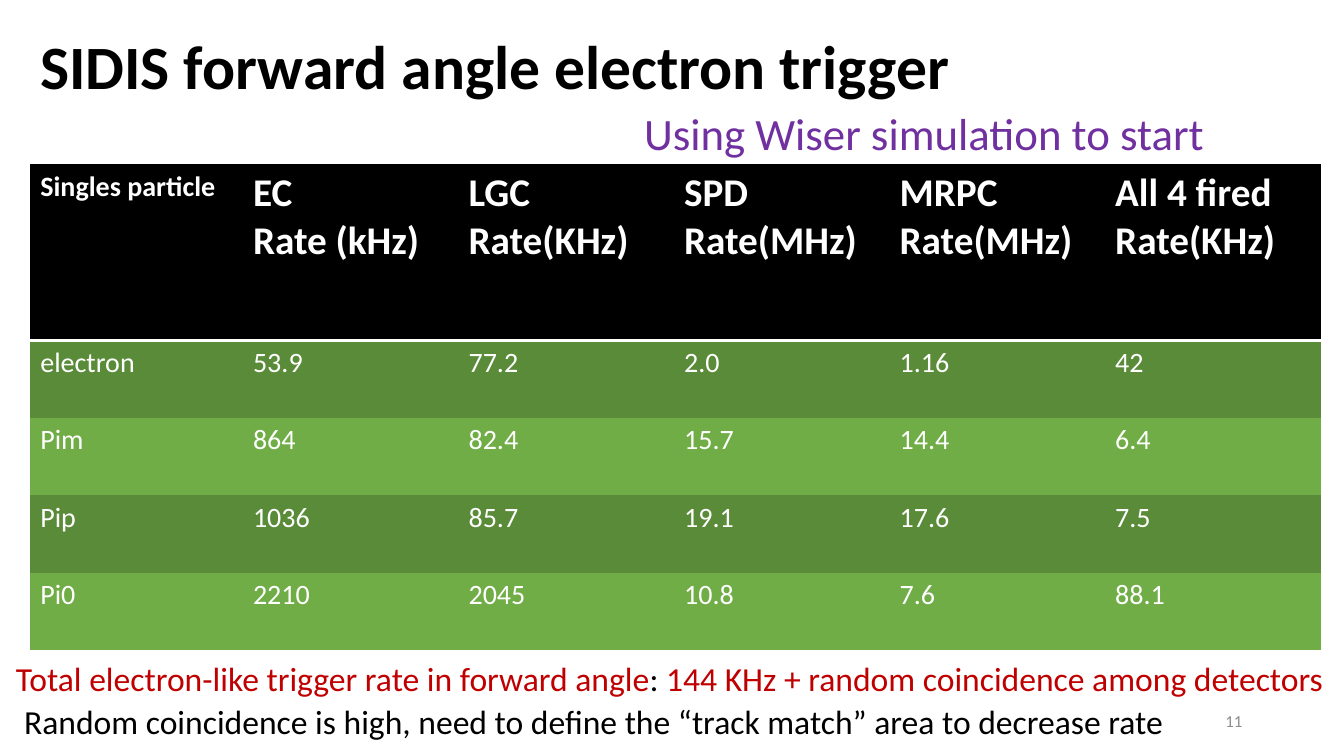
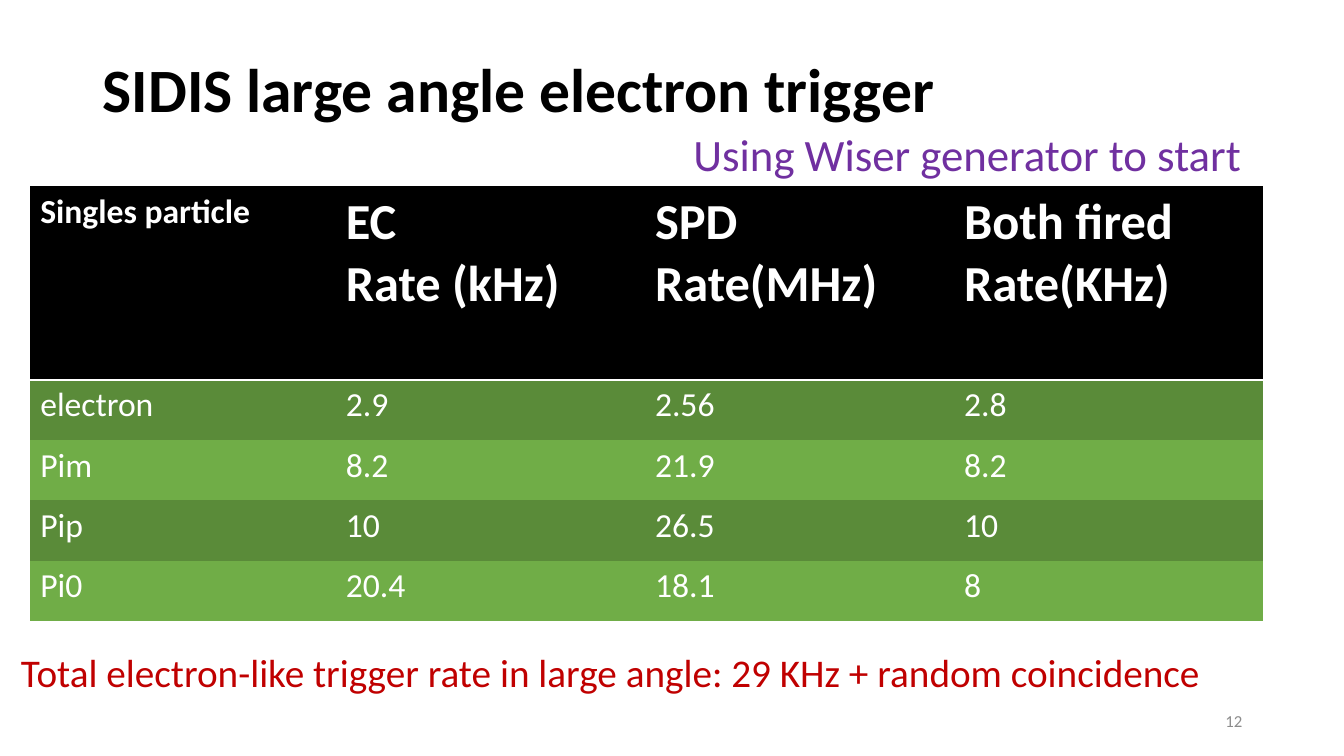
from lxml import etree
from pptx import Presentation
from pptx import util as u
from pptx.dml import color as dml
from pptx.enum import text as t
from pptx.oxml import ns

PX = 9144
FONT = "Calibri"
COLORS = {
    "ink": "000000",
    "paper": "FFFFFF",
    "dark_row": "5A8B39",
    "light_row": "70AD47",
    "note": "7030A0",
    "result": "C00000",
    "number": "8C8C8C",
}
PLAIN_TABLE = "{2D5ABB26-0587-4C30-8999-92F81FD0307C}"
TITLE_ONLY = 5


def rgb(name):
    return dml.RGBColor.from_string(COLORS[name])


def emu(box):
    return [u.Emu(length * PX) for length in box]


def write(frame, text, size=24, color="ink", bold=False,
          align=t.PP_ALIGN.LEFT, spacing=None):
    lines = [[(line, color)] for line in text.split("\n")] if isinstance(text, str) else [text]
    for index, line in enumerate(lines):
        para = frame.add_paragraph() if index else frame.paragraphs[0]
        para.alignment = align
        if spacing:
            para.line_spacing = spacing
        for words, shade in line:
            span = para.add_run()
            span.text = words
            span.font.name = FONT
            span.font.size = u.Pt(size)
            span.font.bold = bold
            span.font.color.rgb = rgb(shade)


def add_title(page, box, text):
    title = page.shapes.title
    title.left, title.top, title.width, title.height = emu(box)
    frame = title.text_frame
    frame.auto_size = t.MSO_AUTO_SIZE.NONE
    frame.vertical_anchor = t.MSO_ANCHOR.MIDDLE
    write(frame, text, size=44, bold=True, spacing=0.9)


def add_text(page, box, text, wrap=True, anchor=t.MSO_ANCHOR.TOP, **style):
    frame = page.shapes.add_textbox(*emu(box)).text_frame
    frame.word_wrap = wrap
    frame.vertical_anchor = anchor
    write(frame, text, **style)


def add_bottom_rule(cell, color, points):
    properties = cell._tc.get_or_add_tcPr()
    line = etree.Element(ns.qn("a:lnB"), w=str(u.Pt(points)))
    fill = etree.SubElement(line, ns.qn("a:solidFill"))
    etree.SubElement(fill, ns.qn("a:srgbClr"), val=COLORS[color])
    properties.insert(0, line)


def add_rates(page, box, first_column, header_height, rows, label_size, header_size):
    left, top, width, height = box
    row_count, column_count = len(rows), len(rows[0])
    holder = page.shapes.add_table(row_count, column_count, *emu(box))
    for style in holder.element.iter(ns.qn("a:tableStyleId")):
        style.text = PLAIN_TABLE
    table = holder.table
    table.first_row = True
    table.horz_banding = False

    other_column = (width - first_column) / (column_count - 1)
    body_height = (height - header_height) / (row_count - 1)
    for index, column in enumerate(table.columns):
        column.width = u.Emu(round((other_column if index else first_column) * PX))
    for index, row in enumerate(table.rows):
        row.height = u.Emu(round((body_height if index else header_height) * PX))

    for r, values in enumerate(rows):
        header = r == 0
        band = "ink" if header else ("dark_row" if r % 2 else "light_row")
        for c, value in enumerate(values):
            cell = table.cell(r, c)
            cell.fill.solid()
            cell.fill.fore_color.rgb = rgb(band)
            size = header_size if header and c else label_size
            write(cell.text_frame, value, size=size, color="paper", bold=header)
            if header:
                add_bottom_rule(cell, "paper", 2)


def add_trigger_page(deck, number, title, note, rates, results):
    page = deck.slides.add_slide(deck.slide_layouts[TITLE_ONLY])
    add_title(page, *title)
    add_rates(page, **rates)
    add_text(page, *note, size=32, color="note")
    add_text(page, (942, 695, 300, 40), str(number), size=12, color="number",
             align=t.PP_ALIGN.RIGHT, anchor=t.MSO_ANCHOR.MIDDLE)
    for box, text, style in results:
        add_text(page, box, text, wrap=False, **style)


def main():
    deck = Presentation()
    deck.slide_width, deck.slide_height = emu((1333, 750))

    add_trigger_page(
        deck, 11,
        title=((30, 12, 1150, 114), "SIDIS forward angle electron trigger"),
        note=((629, 100, 665, 64), "Using Wiser simulation to start"),
        rates=dict(
            box=(30, 163, 1280, 482), first_column=211, header_height=175,
            label_size=20, header_size=28,
            rows=[
                ["Singles particle", "EC\nRate (kHz)", "LGC\nRate(KHz)",
                 "SPD\nRate(MHz)", "MRPC\nRate(MHz)", "All 4 fired\nRate(KHz)"],
                ["electron", "53.9", "77.2", "2.0", "1.16", "42"],
                ["Pim", "864", "82.4", "15.7", "14.4", "6.4"],
                ["Pip", "1036", "85.7", "19.1", "17.6", "7.5"],
                ["Pi0", "2210", "2045", "10.8", "7.6", "88.1"],
            ],
        ),
        results=[
            ((6, 648, 1327, 50),
             [("Total electron-like trigger rate in forward angle", "result"),
              (": ", "ink"),
              ("144 KHz + random coincidence among detectors", "result")], {}),
            ((14, 690, 1161, 50),
             "Random coincidence is high, need to define the “track match” area to decrease rate",
             {}),
        ],
    )
    add_trigger_page(
        deck, 12,
        title=((92, 40, 1150, 104), "SIDIS large angle electron trigger"),
        note=((678, 121, 587, 64), "Using Wiser generator to start"),
        rates=dict(
            box=(30, 185, 1223, 431), first_column=303, header_height=192,
            label_size=24, header_size=36,
            rows=[
                ["Singles particle", "EC\nRate (kHz)", "SPD\nRate(MHz)",
                 "Both fired\nRate(KHz)"],
                ["electron", "2.9", "2.56", "2.8"],
                ["Pim", "8.2", "21.9", "8.2"],
                ["Pip", "10", "26.5", "10"],
                ["Pi0", "20.4", "18.1", "8"],
            ],
        ),
        results=[
            ((11, 638, 1193, 57),
             "Total electron-like trigger rate in large angle: 29 KHz + random coincidence",
             dict(size=28, color="result")),
        ],
    )
    deck.save("out.pptx")


if __name__ == "__main__":
    main()
